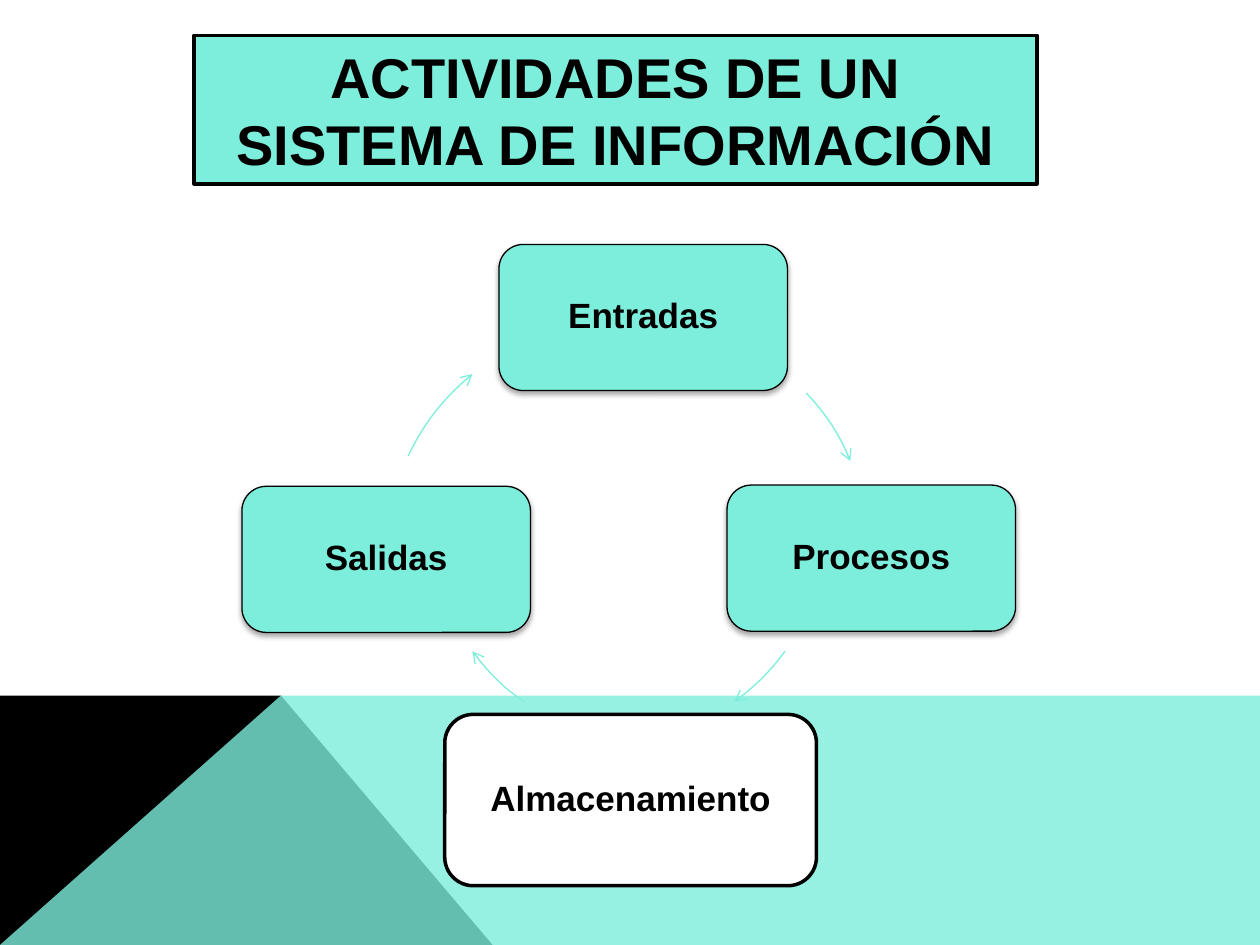
from lxml import etree
from pptx import Presentation
from pptx import util as u
from pptx.dml.color import RGBColor
from pptx.enum import shapes, text
from pptx.oxml import ns

TURQUOISE = RGBColor(0x7C, 0xEE, 0xDB)
BLACK = RGBColor(0, 0, 0)
WHITE = RGBColor(255, 255, 255)

NODES = [
    ("Entradas", (3.96, 1.94, 2.29, 1.16), TURQUOISE, 0.75, True),
    ("Procesos", (5.77, 3.85, 2.29, 1.16), TURQUOISE, 0.75, True),
    ("Almacenamiento", (3.53, 5.67, 2.95, 1.36), WHITE, 2, False),
    ("Salidas", (1.92, 3.86, 2.29, 1.16), TURQUOISE, 0.75, True),
]
CYCLE_SIZE = 3.83
ARROWS = [
    ((3.08, 2.51), [(6.4, 3.12), (6.55, 3.28), (6.67, 3.46), (6.75, 3.66)]),
    ((2.78, 2.11), [(6.23, 5.17), (6.12, 5.32), (5.99, 5.45), (5.83, 5.57)]),
    ((3.37, 2.1), [(4.16, 5.57), (4, 5.46), (3.87, 5.33), (3.75, 5.17)]),
    ((3.06, 2.53), [(3.24, 3.62), (3.36, 3.37), (3.53, 3.15), (3.75, 2.97)]),
]


def add_element(parent, tag, **attributes):
    """Append a DrawingML child element and return it."""
    return etree.SubElement(parent, ns.qn(tag), attributes)


def add_outline(slide, points):
    """Add a closed freeform through points given in inches."""
    start, *rest = [(u.Inches(x), u.Inches(y)) for x, y in points]
    builder = slide.shapes.build_freeform(*start)
    builder.add_line_segments(rest, close=True)
    shape = builder.convert_to_shape()
    shape.shadow.inherit = False
    return shape


def add_background_area(slide, points, color, opacity=100):
    """Add a borderless filled polygon with the given opacity percentage."""
    shape = add_outline(slide, points)
    shape.fill.solid()
    shape.fill.fore_color.rgb = color
    shape.line.fill.background()
    if opacity < 100:
        fill_color = shape.element.spPr.find(".//" + ns.qn("a:srgbClr"))
        add_element(fill_color, "a:alpha", val=str(opacity * 1000))


def add_box(slide, kind, box, label, size, fill, line_width):
    """Add an outlined shape with a bold centred label."""
    shape = slide.shapes.add_shape(kind, *map(u.Inches, box))
    shape.shadow.inherit = False
    shape.fill.solid()
    shape.fill.fore_color.rgb = fill
    shape.line.color.rgb = BLACK
    shape.line.width = u.Pt(line_width)
    frame = shape.text_frame
    frame.word_wrap = True
    frame.vertical_anchor = text.MSO_ANCHOR.MIDDLE
    frame.text = label
    paragraph = frame.paragraphs[0]
    paragraph.alignment = text.PP_ALIGN.CENTER
    font = paragraph.runs[0].font
    font.name, font.size, font.bold = "Arial", u.Pt(size), True
    font.color.rgb = BLACK
    return shape


def add_soft_shadow(shape):
    """Give a shape a soft shadow falling straight down."""
    effects = shape.element.spPr.find(ns.qn("a:effectLst"))
    shadow = add_element(effects, "a:outerShdw", blurRad=str(u.Pt(3.1)),
                         dist=str(u.Pt(1.8)), dir="5400000", rotWithShape="0")
    color = add_element(shadow, "a:srgbClr", val=str(BLACK))
    add_element(color, "a:alpha", val="35000")


def add_node(slide, label, box, fill, line_width, shadowed):
    """Add one rounded step of the cycle."""
    shape = add_box(slide, shapes.MSO_SHAPE.ROUNDED_RECTANGLE, box, label, 20, fill, line_width)
    shape.text_frame.paragraphs[0].line_spacing = 0.9
    if shadowed:
        add_soft_shadow(shape)


def add_curved_arrow(slide, corner, controls):
    """Add a thin Bézier arrow inside the square frame of the cycle."""
    left, top = corner
    right, bottom = left + CYCLE_SIZE, top + CYCLE_SIZE
    shape = add_outline(slide, [(left, top), (right, top), (right, bottom), (left, bottom)])
    outline = shape.element.spPr.find(".//" + ns.qn("a:path"))
    for segment in list(outline):
        outline.remove(segment)
    move = add_element(outline, "a:moveTo")
    curve = add_element(outline, "a:cubicBezTo")
    for parent, (x, y) in zip((move, curve, curve, curve), controls):
        add_element(parent, "a:pt", x=str(u.Inches(x - left)), y=str(u.Inches(y - top)))
    shape.fill.background()
    shape.line.color.rgb = TURQUOISE
    shape.line.width = u.Pt(0.75)
    add_element(shape.element.spPr.find(ns.qn("a:ln")), "a:tailEnd", type="arrow")


def main():
    """Build and save the slide."""
    presentation = Presentation()
    presentation.slide_width, presentation.slide_height = u.Inches(10), u.Inches(7.5)
    slide = presentation.slides.add_slide(presentation.slide_layouts[6])
    add_background_area(slide, [(0, 7.5), (0, 5.52), (2.23, 5.52), (3.91, 7.5)], BLACK)
    add_background_area(slide, [(0, 7.5), (2.23, 5.52), (10, 5.52), (10, 7.5)], TURQUOISE, 80)
    add_box(slide, shapes.MSO_SHAPE.RECTANGLE, (1.54, 0.28, 6.69, 1.18),
            "ACTIVIDADES DE UN SISTEMA DE INFORMACIÓN", 32, TURQUOISE, 2)
    for node, arrow in zip(NODES, ARROWS):
        add_node(slide, *node)
        add_curved_arrow(slide, *arrow)
    presentation.save("out.pptx")


if __name__ == "__main__":
    main()
